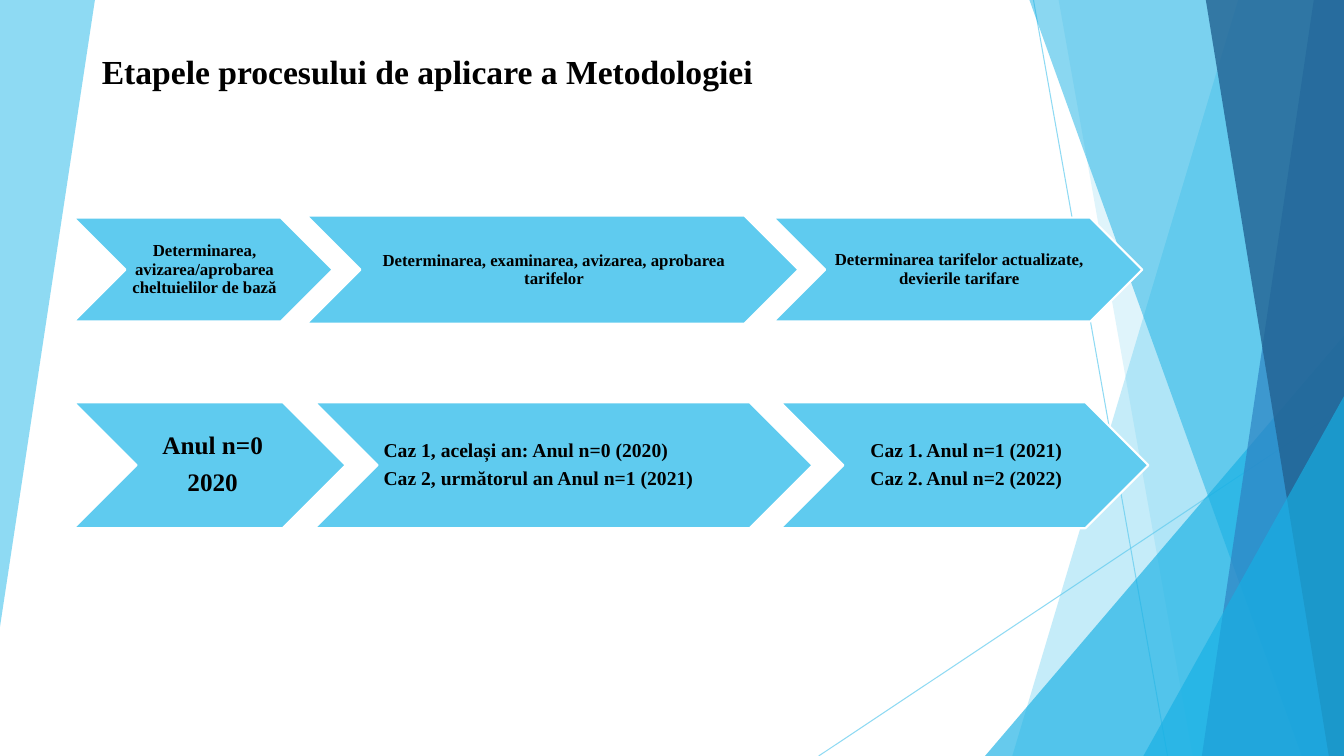
from lxml.etree import SubElement
from pptx import Presentation
from pptx.dml.color import RGBColor
from pptx.enum.shapes import MSO_CONNECTOR, MSO_SHAPE
from pptx.enum.text import MSO_ANCHOR, PP_ALIGN
from pptx.oxml.ns import qn
from pptx.util import Inches, Pt

WIDTH, HEIGHT = 13.33, 7.5
FONT = "Times New Roman"
BLACK, WHITE = "000000", "FFFFFF"
SKY, CYAN, BLUE, NAVY = "5FCBEF", "17B0E4", "2E83C3", "226292"

# Facets: corner points, colour, opacity in percent
LEFT_FACET = ([(0, 0), (0.94, 0), (0.94, 0.01), (0, 6.22)], SKY, 70)


def right_facet(top, bottom, colour, opacity):
    """A facet that reaches from a slanted edge to the right side of the slide."""
    return [(top, 0), (WIDTH, 0), (WIDTH, HEIGHT), (bottom, HEIGHT)], colour, opacity


# Chevrons: left, width, lines, font size, alignment, left inset
STAGES = [
    (0.73, 2.16, 2.57, 1.03, ["Determinarea, avizarea/aprobarea cheltuielilor de bază"],
     12, PP_ALIGN.CENTER, 0.05),
    (3.04, 2.14, 4.88, 1.07, ["Determinarea, examinarea, avizarea, aprobarea tarifelor"],
     12, PP_ALIGN.CENTER, 0.05),
    (7.67, 2.16, 3.66, 1.03, ["Determinarea tarifelor actualizate, devierile tarifare"],
     12, PP_ALIGN.CENTER, 0.05),
    (0.73, 3.99, 2.7, 1.25, ["Anul n=0", "2020"], 18, PP_ALIGN.CENTER, 0.08),
    (3.12, 3.99, 4.94, 1.25,
     ["Caz 1, același an: Anul n=0 (2020)", "Caz 2, următorul an Anul n=1 (2021)"],
     14, PP_ALIGN.LEFT, 0.06),
    (7.74, 3.99, 3.65, 1.25, ["Caz 1. Anul n=1 (2021)", "Caz 2. Anul n=2 (2022)"],
     14, PP_ALIGN.CENTER, 0.06),
]


def colour_of(hex_string):
    return RGBColor.from_string(hex_string)


def set_opacity(properties, percent):
    colour = next(properties.iter(qn("a:srgbClr")))
    SubElement(colour, qn("a:alpha")).set("val", str(percent * 1000))


def fill_facet(shape, colour, opacity):
    shape.shadow.inherit = False
    shape.fill.solid()
    shape.fill.fore_color.rgb = colour_of(colour)
    shape.line.fill.background()
    set_opacity(shape._element.spPr, opacity)


def add_facet(slide, points, colour, opacity):
    corners = [(Inches(x), Inches(y)) for x, y in points]
    builder = slide.shapes.build_freeform(*corners[0], scale=1.0)
    builder.add_line_segments(corners[1:], close=True)
    fill_facet(builder.convert_to_shape(), colour, opacity)


def add_corner_triangle(slide, left, top):
    triangle = slide.shapes.add_shape(
        MSO_SHAPE.ISOSCELES_TRIANGLE, Inches(left), Inches(top),
        Inches(WIDTH - left), Inches(HEIGHT - top))
    triangle.adjustments[0] = 1
    fill_facet(triangle, CYAN, 66)


def add_thin_line(slide, start_x, start_y, end_x, end_y):
    line = slide.shapes.add_connector(
        MSO_CONNECTOR.STRAIGHT, Inches(start_x), Inches(start_y),
        Inches(end_x), Inches(end_y))
    line.line.color.rgb = colour_of(SKY)
    line.line.width = Pt(0.75)
    properties = line._element.spPr
    set_opacity(properties, 70)
    SubElement(properties, qn("a:effectLst"))


def format_runs(paragraph, size):
    for run in paragraph.runs:
        run.font.name = FONT
        run.font.size = Pt(size)
        run.font.bold = True
        run.font.color.rgb = colour_of(BLACK)


def add_backdrop(slide):
    add_facet(slide, *LEFT_FACET)
    add_thin_line(slide, 10.25, 0, 11.58, HEIGHT)
    add_thin_line(slide, WIDTH, 4.03, 8.12, HEIGHT)
    add_facet(slide, *right_facet(12.28, 10.04, SKY, 36))
    add_facet(slide, *right_facet(10.5, 11.83, SKY, 20))
    add_corner_triangle(slide, 9.77, 3.33)
    add_facet(slide, *right_facet(10.21, 12.91, CYAN, 50))
    add_facet(slide, *right_facet(13.03, 11.92, BLUE, 70))
    add_facet(slide, *right_facet(11.96, 13.18, NAVY, 80))
    add_corner_triangle(slide, 11.34, 3.93)


def place_title(slide, text):
    title = slide.shapes.title
    title.left, title.top = Inches(0.91), Inches(0.4)
    title.width, title.height = Inches(9.92), Inches(0.56)
    frame = title.text_frame
    frame.text = text
    frame.vertical_anchor = MSO_ANCHOR.BOTTOM
    frame.paragraphs[0].alignment = PP_ALIGN.LEFT
    format_runs(frame.paragraphs[0], 24)
    # Bring the title in front of the backdrop
    slide.shapes._spTree.append(title._element)


def add_chevron(slide, left, top, width, height, lines, size, alignment, inset):
    chevron = slide.shapes.add_shape(
        MSO_SHAPE.CHEVRON, Inches(left), Inches(top), Inches(width), Inches(height))
    chevron.shadow.inherit = False
    chevron.fill.solid()
    chevron.fill.fore_color.rgb = colour_of(SKY)
    chevron.line.color.rgb = colour_of(WHITE)
    chevron.line.width = Pt(1.5)
    frame = chevron.text_frame
    frame.word_wrap = True
    frame.vertical_anchor = MSO_ANCHOR.MIDDLE
    frame.margin_left = Inches(inset)
    frame.margin_top = frame.margin_right = frame.margin_bottom = Inches(0.02)
    frame.text = "\n".join(lines)
    for paragraph in frame.paragraphs:
        paragraph.alignment = alignment
        paragraph.line_spacing = 0.9
        paragraph.space_after = Pt(round(size * 0.38))
        format_runs(paragraph, size)


def main():
    presentation = Presentation()
    presentation.slide_width = Inches(WIDTH)
    presentation.slide_height = Inches(HEIGHT)
    slide = presentation.slides.add_slide(presentation.slide_layouts[5])

    add_backdrop(slide)
    place_title(slide, "Etapele procesului de aplicare a Metodologiei")
    for stage in STAGES:
        add_chevron(slide, *stage)

    presentation.save("out.pptx")


if __name__ == "__main__":
    main()
